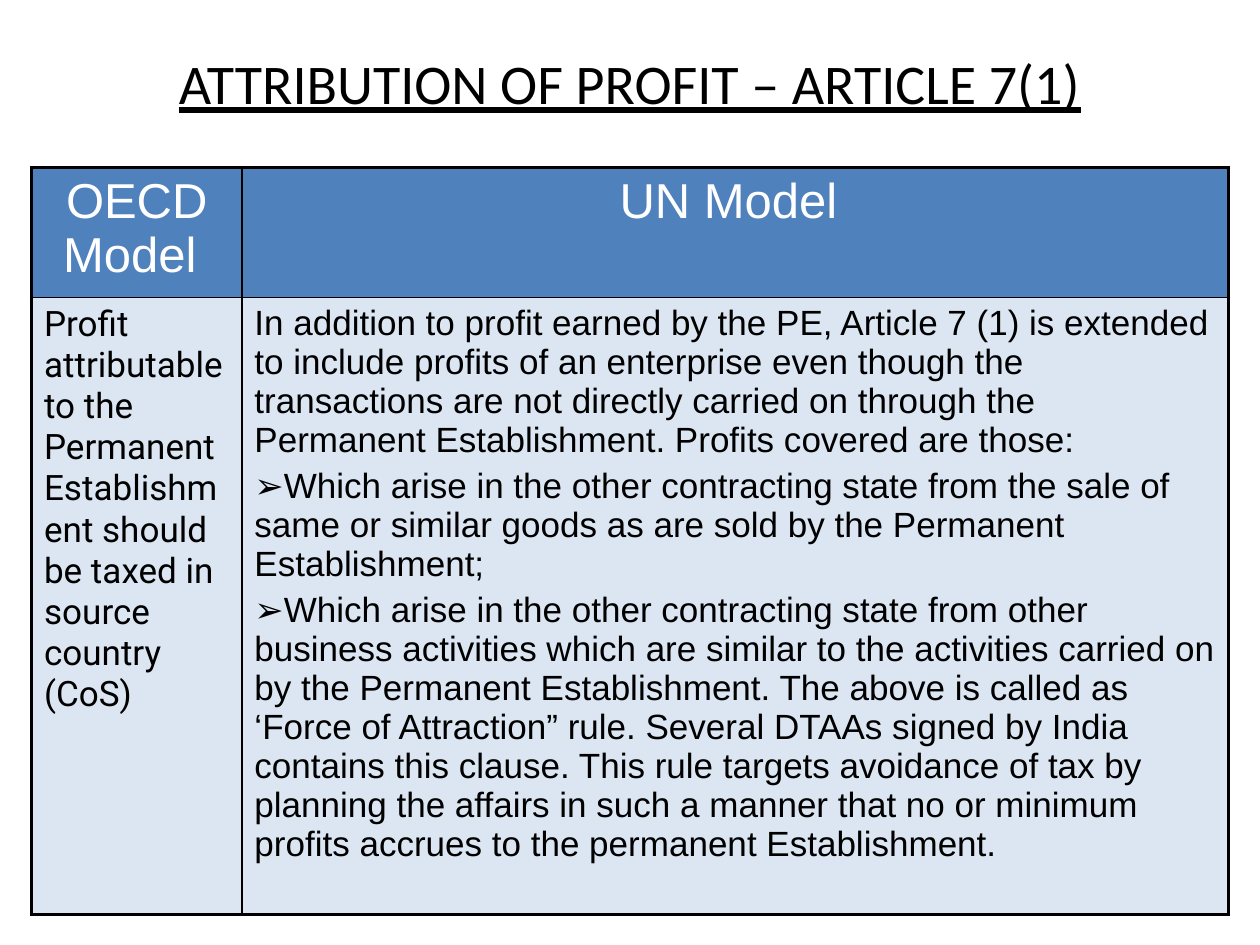
from dataclasses import dataclass

from lxml.etree import SubElement
from pptx import Presentation
from pptx.dml.color import RGBColor
from pptx.enum.text import MSO_ANCHOR, PP_ALIGN
from pptx.oxml.ns import qn
from pptx.util import Inches, Pt


@dataclass(frozen=True)
class Theme:
    ink: str = "000000"
    white: str = "FFFFFF"
    head: str = "4F81BD"
    body: str = "DCE6F2"
    title_size: int = 32
    head_size: int = 28
    body_size: int = 20
    thick: float = 2.25
    thin: float = 1


THEME = Theme()
WIDE, HIGH = 10, 7.5
COLS, ROWS = (1.67, 7.83), (1.03, 4.9)
TOP = 1.33
GAP = 0.2  # paragraph spacing as a share of the type size
BULLET = "➢"

TITLE = "ATTRIBUTION OF PROFIT – ARTICLE 7(1)"
HEADS = ("OECD Model ", "UN Model ")
OECD = (
    "Profit attributable to the Permanent Establishment should be taxed "
    "in source country (CoS)",
)
UN = (
    "In addition to profit earned by the PE, Article 7 (1) is extended to "
    "include profits of an enterprise even though the transactions are not "
    "directly carried on through the Permanent Establishment. Profits "
    "covered are those:",
    "Which arise in the other contracting state from the sale of same or "
    "similar goods as are sold by the Permanent Establishment;",
    "Which arise in the other contracting state from other business "
    "activities which are similar to the activities carried on by the "
    "Permanent Establishment. The above is called as ‘Force of Attraction” "
    "rule. Several DTAAs signed by India contains this clause. This rule "
    "targets avoidance of tax by planning the affairs in such a manner that "
    "no or minimum profits accrues to the permanent Establishment.",
)
GRID = (
    tuple(((head,), "Arial") for head in HEADS),
    ((OECD, "Roboto"), (UN, "Arial")),
)


def add_run(para, text, font, size, color):
    run = para.add_run()
    run.text = text
    run.font.name = font
    run.font.size = Pt(size)
    run.font.bold = False
    run.font.color.rgb = RGBColor.from_string(color)
    return run


def add_bullet(para):
    props = para._p.get_or_add_pPr()
    props.set("marL", "0")
    props.set("indent", "0")
    SubElement(props, qn("a:buFont"), typeface="Arial")
    SubElement(props, qn("a:buChar"), char=BULLET)


def add_edges(cell, row, col):
    """Draw thick lines on the table's outside and thin ones within."""
    outer = {
        "L": col == 0,
        "R": col == len(COLS) - 1,
        "T": row == 0,
        "B": row == len(ROWS) - 1,
    }
    props = cell._tc.get_or_add_tcPr()
    for side, out in outer.items():
        width = Pt(THEME.thick if out else THEME.thin)
        line = SubElement(props, qn(f"a:ln{side}"), w=str(width))
        fill = SubElement(line, qn("a:solidFill"))
        SubElement(fill, qn("a:srgbClr"), val=THEME.ink)


def fill_cell(cell, row, col):
    texts, font = GRID[row][col]
    is_head = row == 0
    size = THEME.head_size if is_head else THEME.body_size
    add_edges(cell, row, col)
    cell.fill.solid()
    cell.fill.fore_color.rgb = RGBColor.from_string(
        THEME.head if is_head else THEME.body)
    frame = cell.text_frame
    for rank, text in enumerate(texts):
        para = frame.add_paragraph() if rank else frame.paragraphs[0]
        para.alignment = PP_ALIGN.CENTER if is_head else PP_ALIGN.LEFT
        if rank:
            para.space_before = Pt(size * GAP)
            add_bullet(para)
        add_run(para, text, font, size, THEME.white if is_head else THEME.ink)


def add_title(slide):
    title = slide.shapes.title
    title.left, title.top = Inches(WIDE * 0.05), Inches(HIGH * 0.04)
    title.width, title.height = Inches(WIDE * 0.9), Inches(0.7)
    frame = title.text_frame
    frame.vertical_anchor = MSO_ANCHOR.MIDDLE
    para = frame.paragraphs[0]
    para.alignment = PP_ALIGN.CENTER
    run = add_run(para, TITLE, "Calibri", THEME.title_size, THEME.ink)
    run.font.underline = True


def add_models(slide):
    left = (WIDE - sum(COLS)) / 2
    table = slide.shapes.add_table(
        len(ROWS), len(COLS), Inches(left), Inches(TOP),
        Inches(sum(COLS)), Inches(sum(ROWS))).table
    for col, width in zip(table.columns, COLS):
        col.width = Inches(width)
    for row, height in zip(table.rows, ROWS):
        row.height = Inches(height)
    for row in range(len(ROWS)):
        for col in range(len(COLS)):
            fill_cell(table.cell(row, col), row, col)


def main():
    deck = Presentation()
    deck.slide_width, deck.slide_height = Inches(WIDE), Inches(HIGH)
    slide = deck.slides.add_slide(deck.slide_layouts[5])
    add_title(slide)
    add_models(slide)
    deck.save("out.pptx")


if __name__ == "__main__":
    main()
